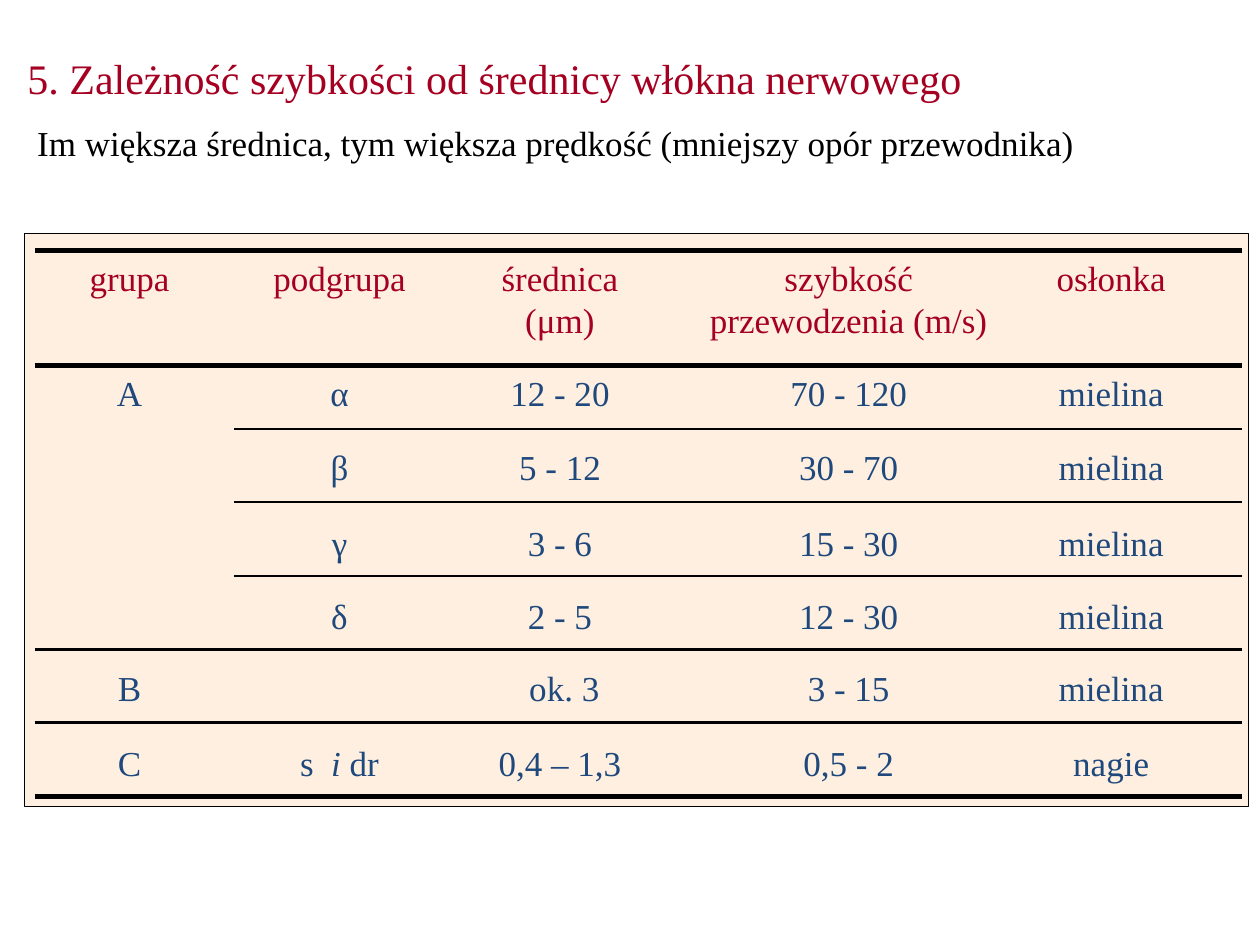
from lxml import etree
from pptx import Presentation
from pptx.dml.color import RGBColor
from pptx.enum.shapes import MSO_CONNECTOR, MSO_SHAPE
from pptx.enum.text import MSO_ANCHOR, PP_ALIGN
from pptx.oxml.ns import qn
from pptx.util import Pt

LEFT, CENTER = PP_ALIGN.LEFT, PP_ALIGN.CENTER
TOP = MSO_ANCHOR.TOP
RECTANGLE = MSO_SHAPE.RECTANGLE
STRAIGHT = MSO_CONNECTOR.STRAIGHT

# Content
TITLE = "5. Zależność szybkości od średnicy włókna nerwowego"
SUBTITLE = "Im większa średnica, tym większa prędkość (mniejszy opór przewodnika)"
ROWS = [
    ["grupa", "podgrupa", "średnica (μm)", "szybkość przewodzenia (m/s)", "osłonka"],
    ["A", "α", "12 - 20", "70 - 120", "mielina"],
    ["", "β", "5 - 12", "30 - 70", "mielina"],
    ["", "γ", "3 - 6", "15 - 30", "mielina"],
    ["", "δ", "2 - 5", "12 - 30", "mielina"],
    ["B", "", " ok. 3", "3 - 15", "mielina"],
    ["C", ("s  ", "i", " dr"), "0,4 – 1,3", "0,5 - 2", "nagie"],
]

# Style and geometry, in points
FONT, RED, BLUE, BLACK, CREAM = "Times New Roman", "A50021", "1F497D", "000000", "FFE1C3"
TABLE_LEFT, TABLE_TOP = 20, 143
COLUMN_WIDTHS = [114, 120, 132, 198, 126]
SIDE_MARGINS = [(20, 26), (20, 20), (25, 25), (13, 13), (14, 38)]
ROW_HEIGHTS = [66, 36] + [42] * 5
TOP_MARGINS = [4, 3.6, 10, 11.6, 11, 10, 11]
RULES = [3, 3, 1, 1, 1, 1.5, 1.5, 3]  # line widths above each row and below the last
GROUP_A_FIRST, GROUP_A_LAST = 1, 4


def color(hex_string):
    return RGBColor.from_string(hex_string)


def format_text(text_frame, size, hex_string, alignment):
    for paragraph in text_frame.paragraphs:
        paragraph.alignment = alignment
        for run in paragraph.runs:
            run.font.name = FONT
            run.font.size = Pt(size)
            run.font.color.rgb = color(hex_string)


def place_heading(shape, text, size, hex_string, left, top, height):
    shape.left, shape.top, shape.width, shape.height = Pt(left), Pt(top), Pt(700), Pt(height)
    text_frame = shape.text_frame
    text_frame.word_wrap = True
    text_frame.vertical_anchor = TOP
    text_frame.text = text
    format_text(text_frame, size, hex_string, LEFT)


def clear_borders(cell):
    properties = cell._tc.get_or_add_tcPr()
    for side in "LRTB":
        line = etree.SubElement(properties, qn(f"a:ln{side}"))
        etree.SubElement(line, qn("a:noFill"))


def fill_cell(cell, content, row, column):
    paragraph = cell.text_frame.paragraphs[0]
    if isinstance(content, tuple):
        for part in content:
            run = paragraph.add_run()
            run.text = part
            run.font.italic = part == "i"
    else:
        paragraph.text = content
    paragraph.line_spacing = Pt(24)
    format_text(cell.text_frame, 20, BLUE if row else RED, CENTER)

    left, right = SIDE_MARGINS[column]
    cell.margin_left, cell.margin_right = Pt(left), Pt(right)
    cell.margin_top, cell.margin_bottom = Pt(TOP_MARGINS[row]), Pt(0)
    cell.vertical_anchor = TOP
    clear_borders(cell)
    cell.fill.background()


def add_rule(slide, left, right, top, width):
    rule = slide.shapes.add_connector(STRAIGHT, Pt(left), Pt(top), Pt(right), Pt(top))
    rule.line.color.rgb = color(BLACK)
    rule.line.width = Pt(width)
    etree.SubElement(rule._element.spPr, qn("a:effectLst"))


presentation = Presentation()
presentation.slide_width, presentation.slide_height = Pt(720), Pt(540)
slide = presentation.slides.add_slide(presentation.slide_layouts[5])

# Headings
place_heading(slide.shapes.title, TITLE, 24, RED, 8.5, 26.5, 36)
subtitle = slide.shapes.add_textbox(0, 0, 0, 0)
place_heading(subtitle, SUBTITLE, 20, BLACK, 14.2, 66, 31)

# Half-transparent panel behind the table
panel = slide.shapes.add_shape(RECTANGLE, Pt(14), Pt(133.5), Pt(699.5), Pt(327.5))
panel.shadow.inherit = False
panel.fill.solid()
panel.fill.fore_color.rgb = color(CREAM)
panel_color = panel._element.spPr.find(".//" + qn("a:srgbClr"))
etree.SubElement(panel_color, qn("a:alpha"), val="50000")
panel.line.color.rgb = color(BLACK)
panel.line.width = Pt(0.75)

# Table of nerve fibres
table = slide.shapes.add_table(
    len(ROWS), len(COLUMN_WIDTHS), Pt(TABLE_LEFT), Pt(TABLE_TOP),
    Pt(sum(COLUMN_WIDTHS)), Pt(sum(ROW_HEIGHTS))).table
table.first_row = table.horz_banding = False
for table_column, width in zip(table.columns, COLUMN_WIDTHS):
    table_column.width = Pt(width)
for table_row, height in zip(table.rows, ROW_HEIGHTS):
    table_row.height = Pt(height)
table.cell(GROUP_A_FIRST, 0).merge(table.cell(GROUP_A_LAST, 0))
for row, contents in enumerate(ROWS):
    for column, content in enumerate(contents):
        fill_cell(table.cell(row, column), content, row, column)

# Rules between the rows; those inside group A skip the first column
table_right = TABLE_LEFT + sum(COLUMN_WIDTHS)
for boundary, width in enumerate(RULES):
    inside_group = GROUP_A_FIRST < boundary <= GROUP_A_LAST
    rule_left = TABLE_LEFT + (COLUMN_WIDTHS[0] if inside_group else 0)
    add_rule(slide, rule_left, table_right,
             TABLE_TOP + sum(ROW_HEIGHTS[:boundary]), width)

presentation.save("out.pptx")
